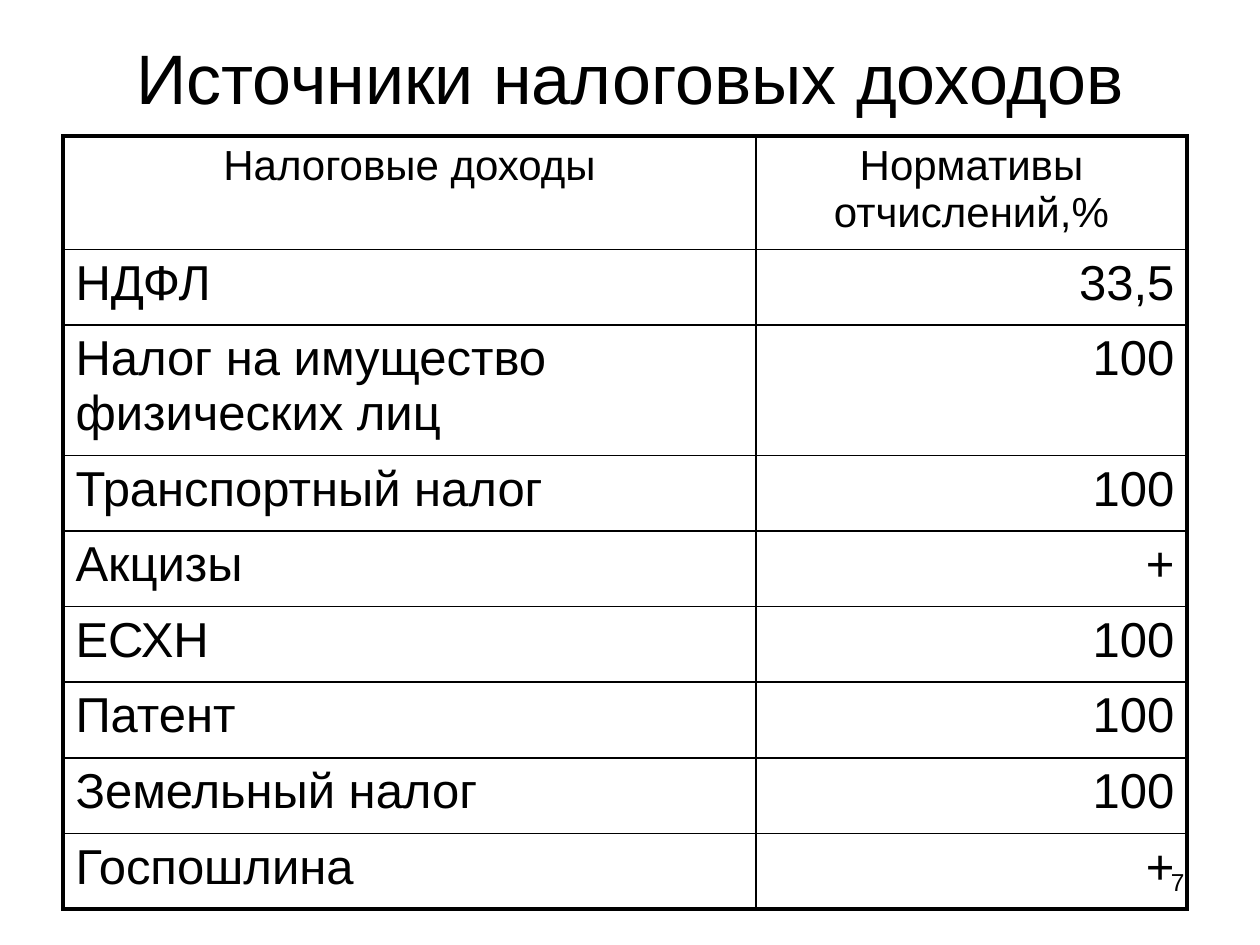
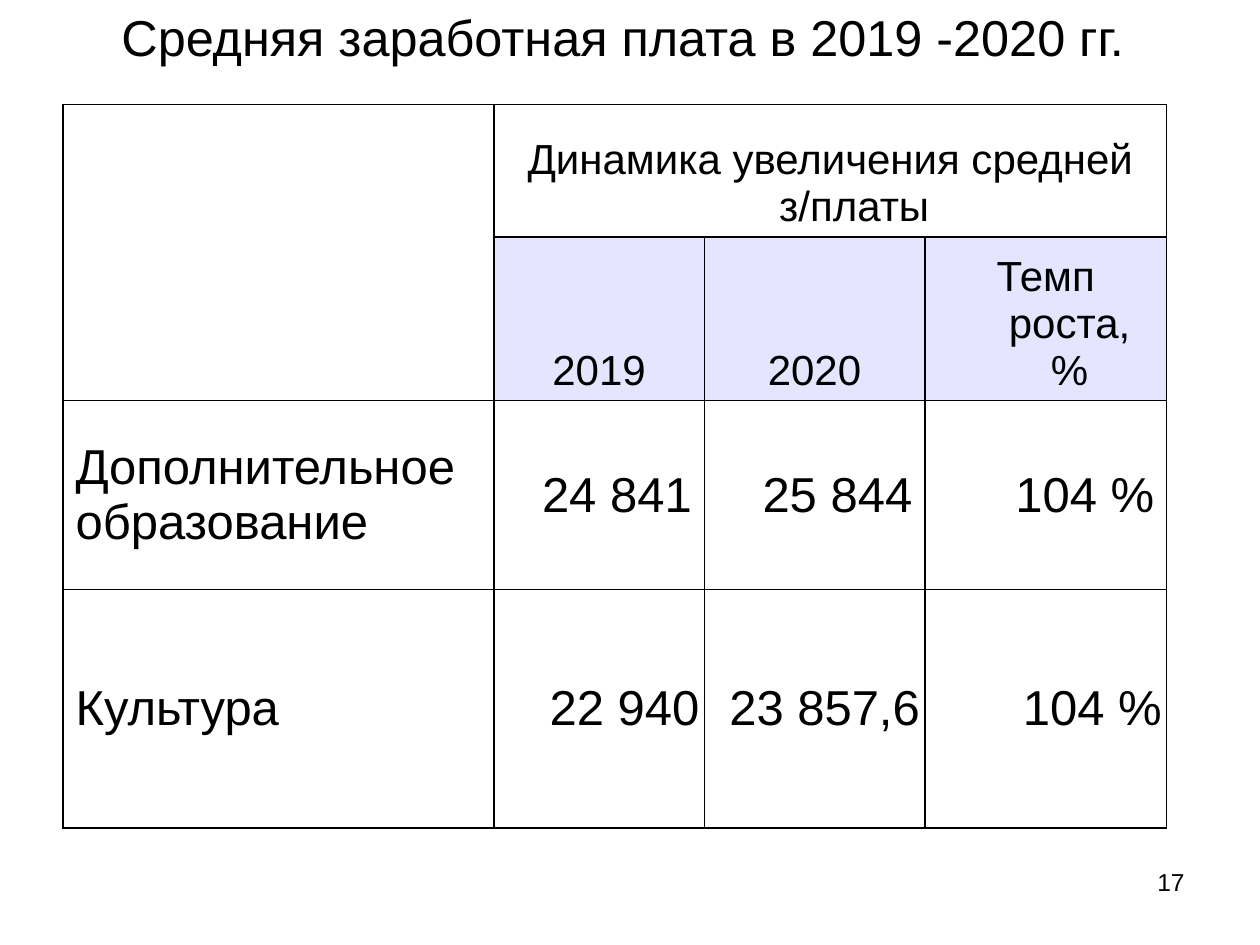
from lxml import etree
from pptx import Presentation
from pptx.dml.color import RGBColor
from pptx.enum.text import MSO_ANCHOR, PP_ALIGN
from pptx.oxml.ns import qn
from pptx.util import Inches, Pt

LEFT, CENTER, RIGHT = PP_ALIGN.LEFT, PP_ALIGN.CENTER, PP_ALIGN.RIGHT
TOP, MIDDLE, BOTTOM = MSO_ANCHOR.TOP, MSO_ANCHOR.MIDDLE, MSO_ANCHOR.BOTTOM
COLORS = {"ink": "000000", "tint": "CCCCFF"}
FONT = "Arial"
THIN, THICK = 1, 2.25
HANG = 0.38
SIDES = ("L", "R", "T", "B")

TAXES = [
    ("Налоговые доходы", "Нормативы отчислений,%"),
    ("НДФЛ", "33,5"),
    ("Налог на имущество физических лиц", "100"),
    ("Транспортный налог", "100"),
    ("Акцизы", "+"),
    ("ЕСХН", "100"),
    ("Патент", "100"),
    ("Земельный налог", "100"),
    ("Госпошлина", "+"),
]
WAGES = [
    ("", "Динамика увеличения средней з/платы", "", ""),
    ("", "2019", "2020", "Темп роста, %"),
    ("Дополнительное образование", "24 841", "25 844", "104 %"),
    ("Культура", "22 940", "23 857,6", "104 %"),
]


class Deck:
    def __init__(self):
        self.show = Presentation()
        self.show.slide_width = Inches(10)
        self.show.slide_height = Inches(7.5)
        self.slide = None

    def page(self, number, title, box, size):
        self.slide = self.show.slides.add_slide(self.show.slide_layouts[6])
        self.text(str(number), (7.17, 6.83, 2.33, 0.52), 14, RIGHT, TOP)
        self.text(title, box, size, CENTER, MIDDLE)

    def text(self, words, box, size, align, anchor):
        frame = self.slide.shapes.add_textbox(*map(Inches, box)).text_frame
        frame.word_wrap = True
        frame.vertical_anchor = anchor
        self.label(frame, words, size, align)

    def label(self, frame, words, size, align, hang=0):
        para = frame.paragraphs[0]
        para.alignment = align
        if hang:
            props = para._p.get_or_add_pPr()
            props.set("marL", str(Inches(hang)))
            props.set("indent", str(-Inches(hang)))
        run = para.add_run()
        run.text = words
        for name, value in {"name": FONT, "size": Pt(size)}.items():
            setattr(run.font, name, value)
        run.font.color.rgb = RGBColor.from_string(COLORS["ink"])

    def table(self, left, top, cols, rows):
        spots = map(Inches, (left, top, sum(cols), sum(rows)))
        grid = self.slide.shapes.add_table(len(rows), len(cols), *spots).table
        grid.first_row = grid.horz_banding = False
        for col, width in zip(grid.columns, cols):
            col.width = Inches(width)
        for row, height in zip(grid.rows, rows):
            row.height = Inches(height)
        return grid

    def cell(self, cell, words, size, align, anchor=TOP, hang=0, pads=None):
        cell.vertical_anchor = anchor
        for name, value in (pads or {}).items():
            setattr(cell, name, Inches(value))
        if words:
            self.label(cell.text_frame, words, size, align, hang)

    def frame(self, grid, edge):
        last_row, last_col = len(grid.rows) - 1, len(grid.columns) - 1
        for r, row in enumerate(grid.rows):
            for c, cell in enumerate(row.cells):
                outer = (c == 0, c == last_col, r == 0, r == last_row)
                props = cell._tc.get_or_add_tcPr()
                for side, out in zip(SIDES, outer):
                    width = str(Pt(edge if out else THIN))
                    line = etree.SubElement(props, qn(f"a:ln{side}"), w=width)
                    fill = etree.SubElement(line, qn("a:solidFill"))
                    etree.SubElement(fill, qn("a:srgbClr"), val=COLORS["ink"])
                cell.fill.background()

    def tint(self, cell):
        cell.fill.solid()
        cell.fill.fore_color.rgb = RGBColor.from_string(COLORS["tint"])
        color = cell._tc.tcPr.find(qn("a:solidFill"))[0]
        etree.SubElement(color, qn("a:alpha"), val="50000")


def taxes(deck):
    deck.page(7, "Источники налоговых доходов", (0.5, 0.3, 9, 0.62), 40)
    rows = [0.87, 0.6, 1] + [0.6] * 6
    grid = deck.table(0.5, 1.08, (5.5, 3.42), rows)
    for r, pair in enumerate(TAXES):
        for c, words in enumerate(pair):
            size, align = (28, (LEFT, RIGHT)[c]) if r else (24, CENTER)
            deck.cell(grid.cell(r, c), words, size, align)
    deck.frame(grid, THICK)


def wages(deck):
    deck.page(17, "Средняя заработная плата в 2019 -2020 гг. ", (0, 0, 10, 0.58), 28.8)
    grid = deck.table(0.5, 0.83, (3.42, 1.67, 1.75, 1.92), (1.05, 1.21, 1.5, 1.89))
    tight = {"margin_left": 0.04, "margin_right": 0.04}
    deck.frame(grid, THIN)
    for r, row in enumerate(WAGES):
        for c, words in enumerate(row):
            cell = grid.cell(r, c)
            if r < 2:
                deck.cell(cell, words, 24, CENTER, BOTTOM, HANG)
            elif c == 0:
                deck.cell(cell, words, 28, LEFT, MIDDLE)
            else:
                pads = tight if r == 3 else None
                deck.cell(cell, words, 28, RIGHT, MIDDLE, HANG, pads)
            if r == 1 and c:
                deck.tint(cell)
    grid.cell(0, 0).merge(grid.cell(1, 0))
    grid.cell(0, 1).merge(grid.cell(0, 3))


def main():
    deck = Deck()
    taxes(deck)
    wages(deck)
    deck.show.save("out.pptx")


if __name__ == "__main__":
    main()
